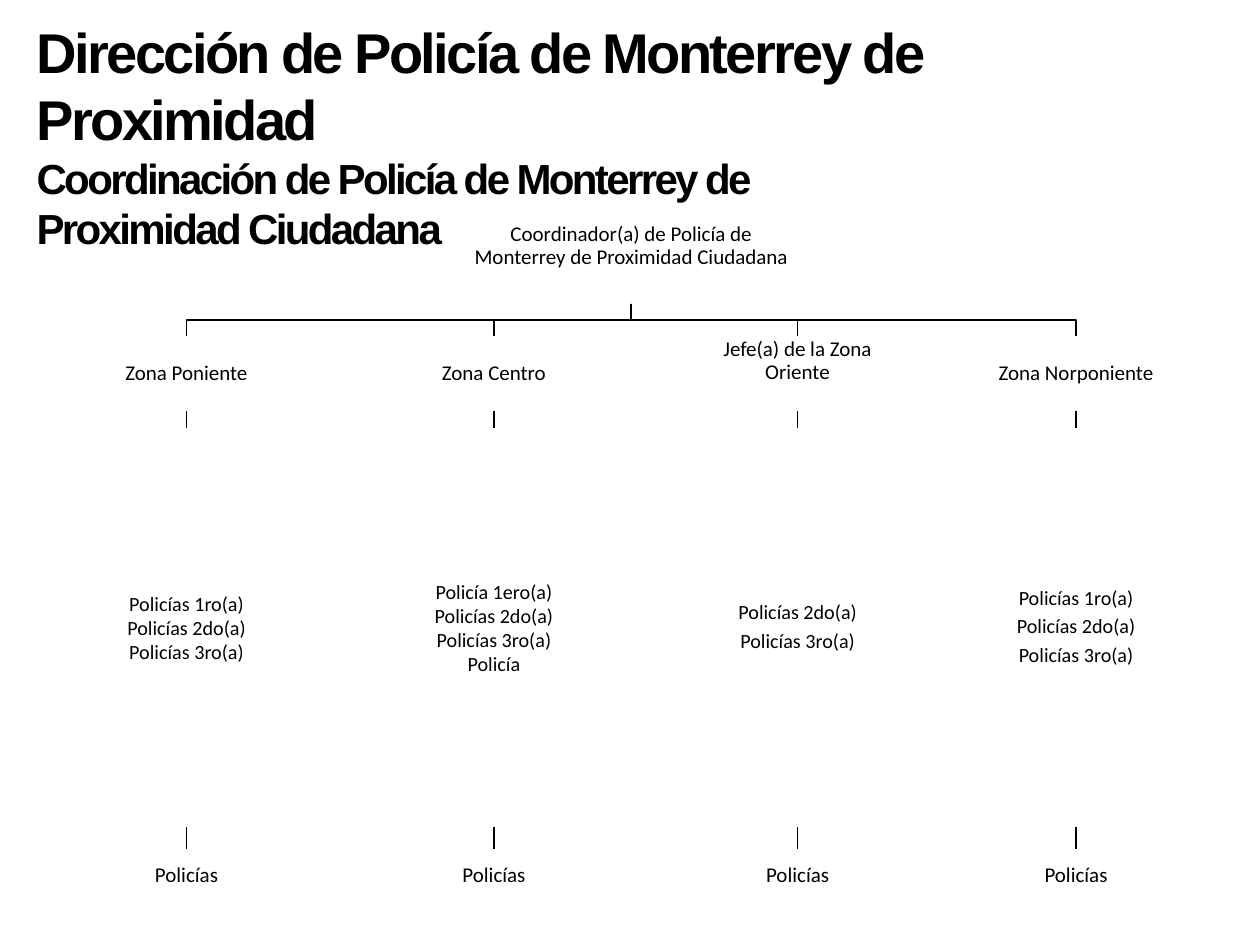
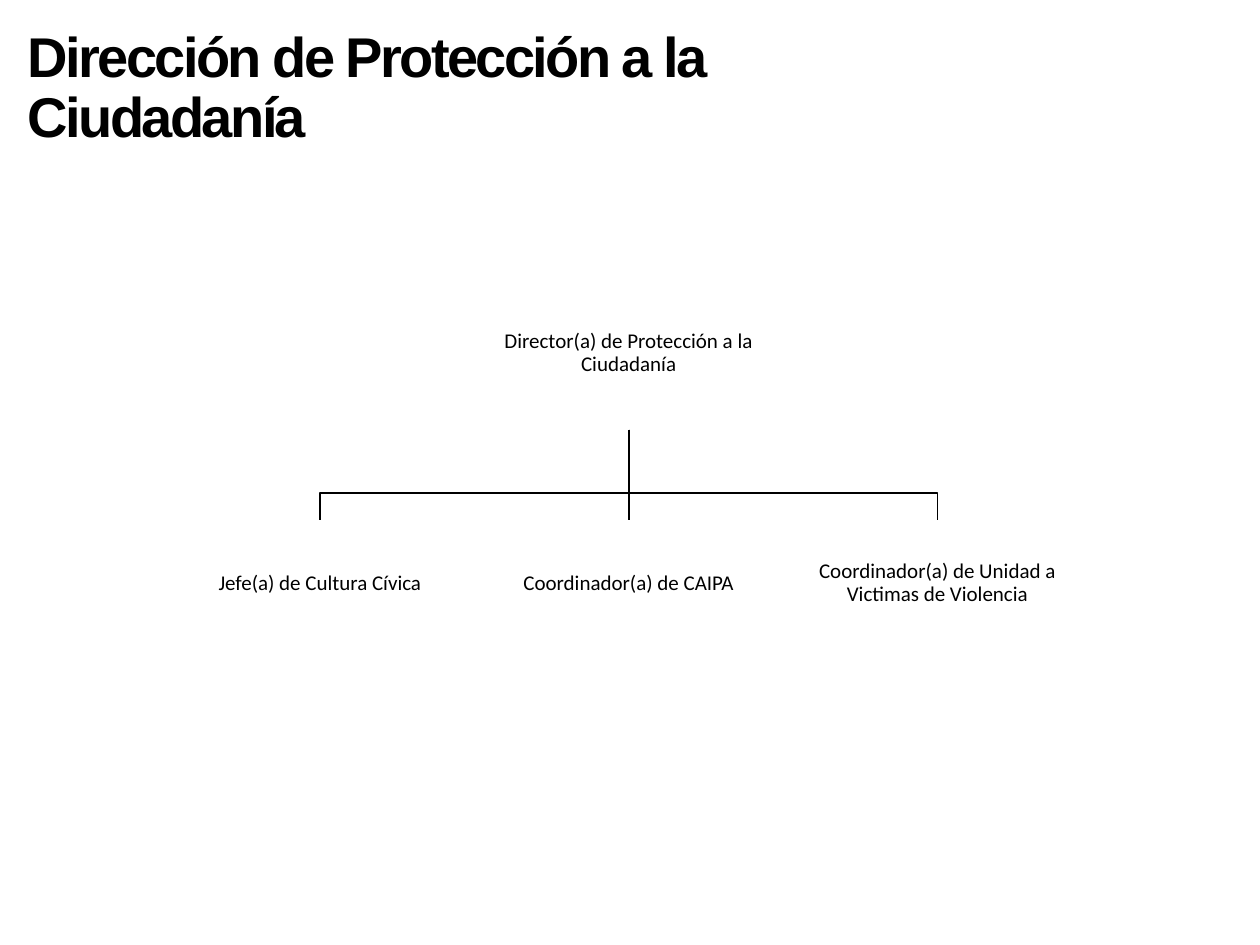
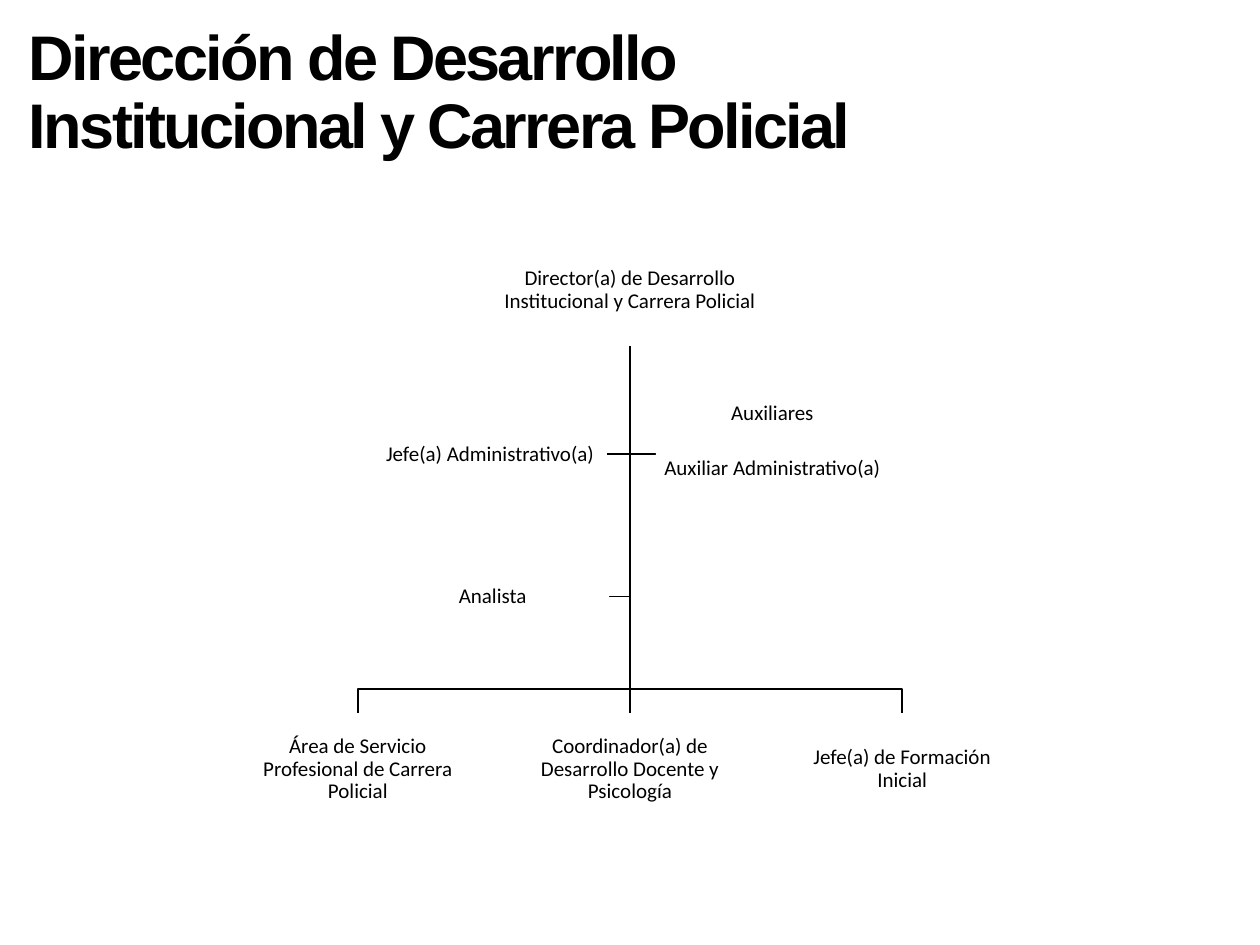
from typing import NamedTuple
from lxml.etree import SubElement
from pptx import Presentation
from pptx.dml.color import RGBColor
from pptx.enum.shapes import MSO_CONNECTOR as LINE, MSO_SHAPE as SHAPE
from pptx.enum.text import MSO_ANCHOR as ANCHOR, MSO_AUTO_SIZE as FIT, PP_ALIGN as ALIGN
from pptx.oxml.ns import qn
from pptx.util import Inches, Pt

BLACK = RGBColor(0x00, 0x00, 0x00)
WHITE = RGBColor(0xFF, 0xFF, 0xFF)
WIDE, HIGH = Inches(10), Inches(7.5)
COL, ROW = WIDE / 10, HIGH / 7.5  # the grid: 10 columns by 7.5 rows
HEAD, BODY = "Arial", "Calibri"
INSET = 0.01
LIFT = 0.2  # room kept free under raised text
GAP = 4


class Box(NamedTuple):
    """A region in grid columns and rows."""
    x: float
    y: float
    w: float
    h: float

    @property
    def mid(self):
        return self.x + self.w / 2

    @property
    def end(self):
        return self.y + self.h

    def inner(self, mid, top, w, h):
        """A box inside this one, centred on the column mid."""
        return Box(self.x + mid - w / 2, self.y + top, w, h)

    def emu(self):
        return (round(self.x * COL), round(self.y * ROW),
                round(self.w * COL), round(self.h * ROW))


def style(para, font, size, bold=False):
    for run in para.runs:
        run.font.name, run.font.size, run.font.bold = font, Pt(size), bold
        run.font.color.rgb = BLACK


def title(slide, box, text, sizes, pitch=0.9):
    shape = slide.shapes.title
    shape.left, shape.top, shape.width, shape.height = box.emu()
    frame = shape.text_frame
    frame.text = text
    frame.word_wrap, frame.auto_size = True, FIT.SHAPE_TO_FIT_TEXT
    frame.vertical_anchor = ANCHOR.TOP
    for para, size in zip(frame.paragraphs, sizes):
        para.alignment, para.line_spacing = ALIGN.LEFT, pitch
        style(para, HEAD, size, bold=True)
        for run in para.runs:
            run._r.get_or_add_rPr().set("spc", "-150")


def node(slide, box, text, size=12, pitch=0.9, gap=GAP, lift=0, fill=True):
    shape = slide.shapes.add_shape(SHAPE.RECTANGLE, *box.emu())
    shape.shadow.inherit = False
    shape.line.fill.background()
    if fill:
        shape.fill.solid()
        shape.fill.fore_color.rgb = WHITE
    else:
        shape.fill.background()
    frame = shape.text_frame
    frame.text = text
    frame.word_wrap, frame.vertical_anchor = True, ANCHOR.MIDDLE
    frame.margin_left = frame.margin_right = frame.margin_top = Inches(INSET)
    frame.margin_bottom = Inches(INSET + lift)
    for para in frame.paragraphs:
        para.alignment, para.line_spacing = ALIGN.CENTER, pitch
        style(para, BODY, size)
    for para in frame.paragraphs[:-1]:
        para.space_after = Pt(gap)


def link(slide, *stops):
    """A straight or bent line through the grid points given."""
    spots = [(round(x * COL), round(y * ROW)) for x, y in stops]
    if len(spots) == 2:
        line = slide.shapes.add_connector(LINE.STRAIGHT, *spots[0], *spots[1])
    else:
        pen = slide.shapes.build_freeform(*spots[0])
        pen.add_line_segments(spots[1:], close=False)
        line = pen.convert_to_shape()
        line.fill.background()
    line.line.color.rgb, line.line.width = BLACK, Pt(1)
    SubElement(line._element.spPr, qn("a:effectLst"))


def fork(slide, root, kids, bend):
    """Join the foot of root to the top of each kid, turning at row bend."""
    for kid in kids:
        if abs(kid.mid - root.mid) < 0.01:
            link(slide, (root.mid, root.end), (root.mid, kid.y))
        else:
            link(slide, (root.mid, root.end), (root.mid, bend),
                 (kid.mid, bend), (kid.mid, kid.y))


def zones(slide, box, head, items):
    """Chart of zones, each a column of name, ranks and officers."""
    root = box.inner(box.w / 2, 0, 2.58, 0.71)
    names = [box.inner(item[0], 0.97, 1.6, 0.59) for item in items]
    fork(slide, root, names, (root.end + names[0].y) / 2)
    node(slide, root, head, lift=LIFT, fill=False)
    for spot, (mid, wide, name, lift, ranks, pitch, gap) in zip(names, items):
        staff = box.inner(mid, 1.7, wide, 3.16)
        foot = box.inner(mid, 5.04, 1.29, 0.42)
        for high, low in ((spot, staff), (staff, foot)):
            link(slide, (high.mid, high.end), (low.mid, low.y))
        node(slide, spot, name, lift=lift)
        node(slide, staff, ranks, size=11.5, pitch=pitch, gap=gap)
        node(slide, foot, "Policías")


def tree(slide, box, head, kids, top, leaf, bend, aides=()):
    """Chart with a head, an even bottom row and aides beside the stem."""
    root = box.inner(box.w / 2, 0, *top)
    wide, high = leaf
    step = (box.w - wide) / (len(kids) - 1)
    row = [box.inner(wide / 2 + i * step, box.h - high, *leaf)
           for i in range(len(kids))]
    fork(slide, root, row, box.y + bend)
    node(slide, root, head, fill=False)
    for spot, text in zip(row, kids):
        node(slide, spot, text)
    for mid, y, text, gap, lift in aides:
        spot = box.inner(mid, y, 1.85, 0.83)
        edge = spot.x if spot.mid > root.mid else spot.x + spot.w
        level = spot.y + spot.h / 2
        link(slide, (root.mid, root.end), (root.mid, level), (edge, level))
        node(slide, spot, text, gap=gap, lift=lift)


def main():
    deck = Presentation()
    deck.slide_width, deck.slide_height = WIDE, HIGH
    prox, care, growth = [deck.slides.add_slide(deck.slide_layouts[5])
                          for _ in range(3)]

    title(prox, Box(0.19, 0.09, 7.46, 2.39),
          "Dirección de Policía de Monterrey de Proximidad\n"
          "Coordinación de Policía de Monterrey de Proximidad Ciudadana",
          (32, 24), pitch=1)
    pair = "Policías 2do(a)\nPolicías 3ro(a)"
    trio = "Policías 1ro(a)\n" + pair
    zones(prox, Box(0.47, 1.7, 9.08, 5.46),
          "Coordinador(a) de Policía de Monterrey de Proximidad Ciudadana", [
              (1.01, 2.02, "Zona Poniente", 0, trio, 1, 0),
              (3.45, 2.35, "Zona Centro", 0,
               f"Policía 1ero(a)\n{pair}\nPolicía", 1, 0),
              (5.86, 1.95, "Jefe(a) de la Zona Oriente", LIFT, pair, 0.9, GAP),
              (8.07, 1.95, "Zona Norponiente", 0, trio, 0.9, GAP)])

    title(care, Box(0.12, 0.18, 7.46, 1.07),
          "Dirección de Protección a la Ciudadanía", (32,))
    tree(care, Box(1.54, 2.19, 6.9, 2.94),
         "Director(a) de Protección a la Ciudadanía",
         ("Jefe(a) de Cultura Cívica", "Coordinador(a) de CAIPA",
          "Coordinador(a) de Unidad a Victimas de Violencia"),
         top=(2.76, 1.22), leaf=(2, 1), bend=1.72)

    title(growth, Box(0.13, 0.16, 7.46, 1.19),
          "Dirección de Desarrollo Institucional y Carrera Policial", (36,))
    tree(growth, Box(1.95, 1.86, 6.1, 4.69),
         "Director(a) de Desarrollo Institucional y Carrera Policial",
         ("Área de Servicio Profesional de Carrera Policial",
          "Coordinador(a) de Desarrollo Docente y Psicología",
          "Jefe(a) de Formación Inicial"),
         top=(2.2, 0.89), leaf=(1.78, 0.89), bend=3.61,
         aides=((1.94, 1.33, "Jefe(a) Administrativo(a)", 0, 0),
                (4.18, 1.33, "Auxiliares\nAuxiliar Administrativo(a)", 18.5, LIFT),
                (1.96, 2.46, "Analista", 0, 0)))
    deck.save("out.pptx")


if __name__ == "__main__":
    main()
